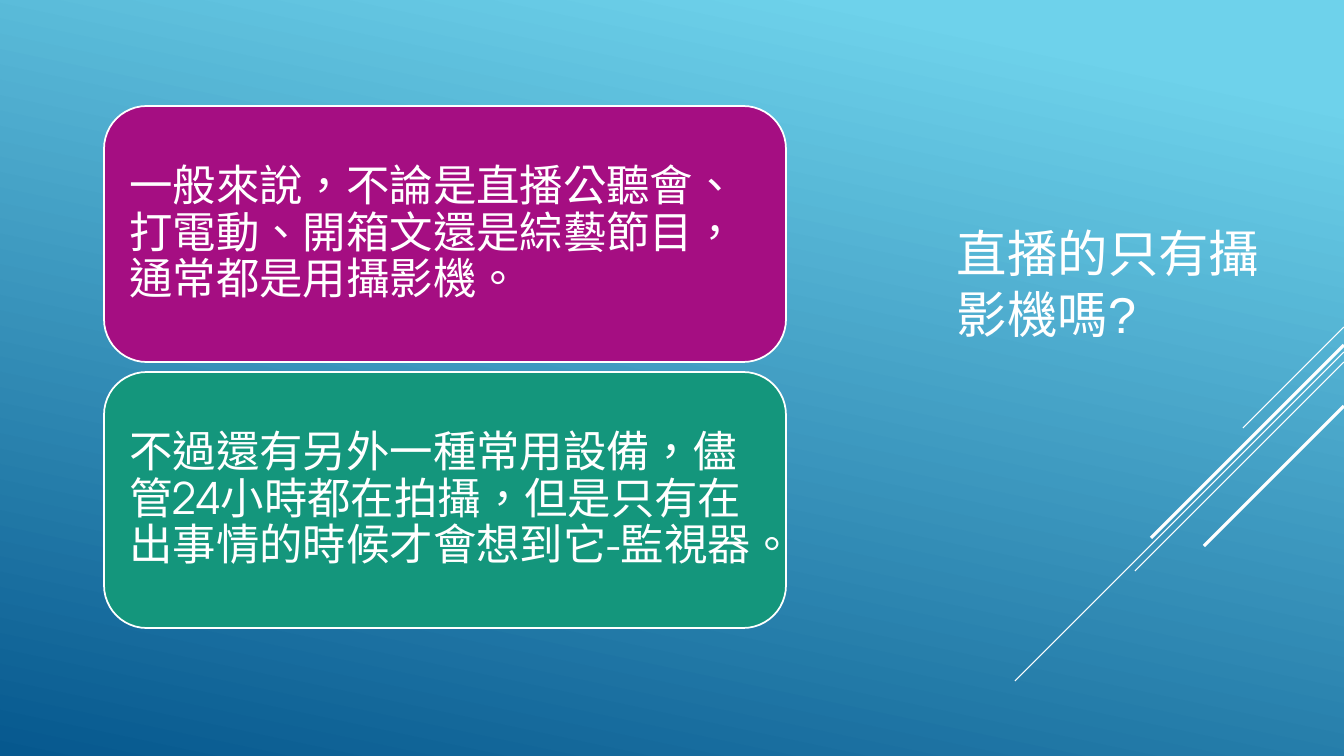
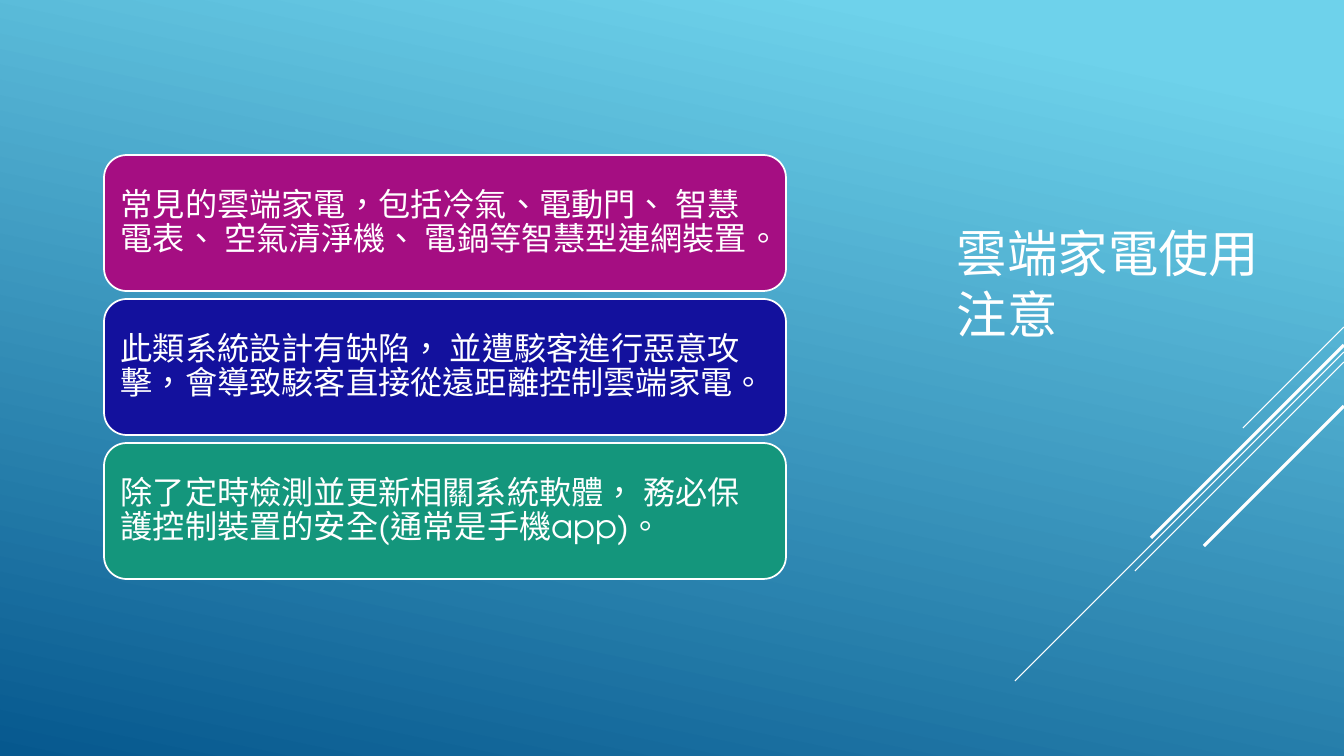
"""Build two slides of stacked message cards on a blue gradient."""
from lxml.etree import SubElement
from pptx import Presentation
from pptx.dml.color import RGBColor
from pptx.enum.lang import MSO_LANGUAGE_ID as Lang
from pptx.enum.shapes import MSO_CONNECTOR as Link, MSO_SHAPE as Shape
from pptx.enum.text import MSO_ANCHOR as Anchor, MSO_AUTO_SIZE as Auto, PP_ALIGN as Align
from pptx.oxml.ns import qn
from pptx.util import Emu, Pt

WIDE, HIGH = 1344, 756
WHITE, PLUM, NAVY, GREEN = "FFFFFF", "A50E82", "13119D", "14967C"
SKY, DEEP = "6ED2EB", "06588E"
HEAD, BODY = "Arial", "TeX Gyre Adventor"
TITLE = (947, 104, 336, 358)
LEFT, WIDTH, MID = 104, 682, 367

# start height at the right edge, run to the lower left, weight
RAYS = [(327, 101, 0.75), (352, 329, 0.75), (362, 209, 0.75),
        (345, 193, 2.25), (406, 140, 2.25)]

SLIDES = [
    {"title": "直播的只有攝影機嗎?", "high": 256, "gap": 10, "pad": 13, "size": 31,
     "cards": [
         (PLUM, "一般來說，不論是直播公聽會、打電動、開箱文還是綜藝節目，通常都是用攝影機。"),
         (GREEN, "不過還有另外一種常用設備，儘管24小時都在拍攝，但是只有在出事情的時候才會想到它-監視器。"),
     ]},
    {"title": "雲端家電使用注意", "high": 136, "gap": 8, "pad": 10, "size": 23,
     "cards": [
         (PLUM, "常見的雲端家電，包括冷氣、電動門、 智慧電表、 空氣清淨機、 電鍋等智慧型連網裝置。"),
         (NAVY, "此類系統設計有缺陷， 並遭駭客進行惡意攻擊，會導致駭客直接從遠距離控制雲端家電。"),
         (GREEN, "除了定時檢測並更新相關系統軟體， 務必保護控制裝置的安全(通常是手機app)。"),
     ]},
]


def px(n):
    return Emu(round(n * 914400 / 100.8))


def tint(code):
    return RGBColor.from_string(code)


def write(shape, text, face, size, pad, space=None):
    frame = shape.text_frame
    frame.text = text
    frame.word_wrap = True
    frame.auto_size = Auto.NONE
    frame.vertical_anchor = Anchor.MIDDLE
    frame.margin_left = frame.margin_right = px(pad)
    frame.margin_top = frame.margin_bottom = px(pad)
    para = frame.paragraphs[0]
    para.alignment = Align.LEFT
    para.line_spacing = space
    font = para.runs[0].font
    font.name, font.size = face, Pt(size)
    font.color.rgb = tint(WHITE)
    font.language_id = Lang.TRADITIONAL_CHINESE


def paint(master):
    fill = master.background.fill
    fill.gradient()
    fill.gradient_angle = 258
    for stop, code, place in zip(fill.gradient_stops, (SKY, DEEP), (0.1, 1)):
        stop.color.rgb = tint(code)
        stop.position = place


def add_rays(slide):
    for top, run, weight in RAYS:
        ray = slide.shapes.add_connector(
            Link.STRAIGHT, px(WIDE), px(top), px(WIDE - run), px(top + run))
        ray.line.color.rgb = tint(WHITE)
        ray.line.width = Pt(weight)
        SubElement(ray._element.spPr, qn("a:effectLst"))


def add_cards(slide, data):
    high, gap, cards = data["high"], data["gap"], data["cards"]
    step = high + gap
    top = MID - (len(cards) * step - gap) / 2
    for i, (code, text) in enumerate(cards):
        card = slide.shapes.add_shape(
            Shape.ROUNDED_RECTANGLE, px(LEFT), px(top + i * step), px(WIDTH), px(high))
        card.shadow.inherit = False
        card.fill.solid()
        card.fill.fore_color.rgb = tint(code)
        card.line.color.rgb = tint(WHITE)
        card.line.width = Pt(1.25)
        write(card, text, BODY, data["size"], data["pad"], 0.9)


def main():
    deck = Presentation()
    deck.slide_width, deck.slide_height = px(WIDE), px(HIGH)
    paint(deck.slide_master)
    for data in SLIDES:
        slide = deck.slides.add_slide(deck.slide_layouts[5])
        add_rays(slide)
        title = slide.shapes.title
        title.left, title.top, title.width, title.height = map(px, TITLE)
        write(title, data["title"], HEAD, 36, 10)
        add_cards(slide, data)
    deck.save("out.pptx")


if __name__ == "__main__":
    main()
